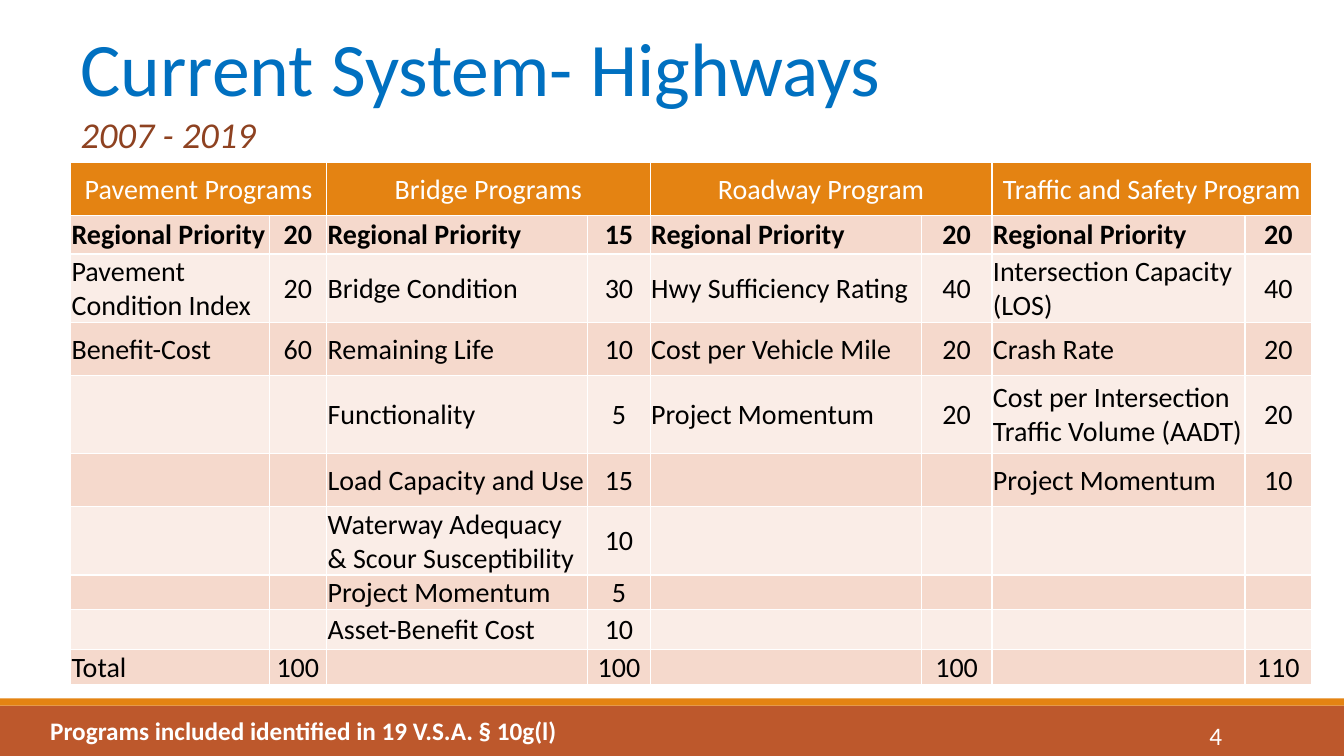
from pptx import Presentation
from pptx.dml.color import RGBColor
from pptx.enum.shapes import MSO_SHAPE
from pptx.enum.text import MSO_ANCHOR, MSO_AUTO_SIZE, PP_ALIGN
from pptx.oxml import parse_xml
from pptx.oxml.ns import nsdecls
from pptx.util import Inches, Pt

RECT = MSO_SHAPE.RECTANGLE
TOP, MIDDLE = MSO_ANCHOR.TOP, MSO_ANCHOR.MIDDLE
LEFT, CENTER, RIGHT = PP_ALIGN.LEFT, PP_ALIGN.CENTER, PP_ALIGN.RIGHT
NO_FIT = MSO_AUTO_SIZE.NONE

FONT = "Calibri"
WHITE = RGBColor(0xFF, 0xFF, 0xFF)
BLACK = RGBColor(0, 0, 0)
BLUE = RGBColor(0x00, 0x70, 0xC0)
BROWN = RGBColor(0x8E, 0x42, 0x21)
RUST = RGBColor(0xBD, 0x58, 0x2C)
ORANGE = RGBColor(0xE4, 0x83, 0x12)
BANDS = RGBColor(0xFA, 0xED, 0xE7), RGBColor(0xF5, 0xD9, 0xCC)

SLIDE_W, SLIDE_H = 13.33, 7.5
COLS = [1.97, 0.57, 2.59, 0.62, 2.69, 0.7, 2.51, 0.66]
ROWS = [0.53, 0.38, 0.66, 0.53, 0.77, 0.53, 0.66, 0.34, 0.4, 0.34]
PROGRAMS = ["Pavement Programs", "Bridge Programs", "Roadway Program",
            "Traffic and Safety Program"]
CRITERIA = [
    ["Regional Priority", "20", "Regional Priority", "15",
     "Regional Priority", "20", "Regional Priority", "20"],
    ["Pavement Condition Index", "20", "Bridge Condition", "30",
     "Hwy Sufficiency Rating", "40", "Intersection Capacity (LOS)", "40"],
    ["Benefit-Cost", "60", "Remaining Life", "10",
     "Cost per Vehicle Mile", "20", "Crash Rate", "20"],
    ["", "", "Functionality", "5", "Project Momentum", "20",
     "Cost per Intersection Traffic Volume (AADT)", "20"],
    ["", "", "Load Capacity and Use", "15", "", "", "Project Momentum", "10"],
    ["", "", "Waterway Adequacy & Scour Susceptibility", "10", "", "", "", ""],
    ["", "", "Project Momentum", "5", "", "", "", ""],
    ["", "", "Asset-Benefit Cost", "10", "", "", "", ""],
    ["Total", "100", "", "100", "", "100", "", "110"],
]


def add_run(p, text, size, color, bold=False, italic=False):
    """Add one formatted run to a paragraph."""
    r = p.add_run()
    r.text = text
    r.font.name, r.font.size = FONT, Pt(size)
    r.font.bold, r.font.italic = bold, italic
    r.font.color.rgb = color


def add_bar(s, top, height, color):
    """Draw a full-width footer bar."""
    sp = s.shapes.add_shape(RECT, 0, Inches(top), Inches(SLIDE_W), Inches(height))
    sp.shadow.inherit = False
    sp.fill.solid()
    sp.fill.fore_color.rgb = color
    sp.line.fill.background()


def add_label(s, box, text, align, anchor, bold=False):
    """Add a white footer label."""
    tf = s.shapes.add_textbox(*map(Inches, box)).text_frame
    tf.word_wrap = True
    tf.vertical_anchor = anchor
    p = tf.paragraphs[0]
    p.alignment = align
    add_run(p, text, 18, WHITE, bold)


def add_title(s):
    """Fill the title placeholder with the heading and the years."""
    sp = s.shapes.title
    sp.left, sp.top, sp.width, sp.height = map(Inches, (0.7, 0.16, 8.22, 1.45))
    tf = sp.text_frame
    tf.word_wrap = False
    tf.auto_size = NO_FIT
    tf.vertical_anchor = TOP
    heading, years = tf.paragraphs[0], tf.add_paragraph()
    heading.alignment = years.alignment = LEFT
    add_run(heading, "Current System- Highways", 54, BLUE)
    add_run(years, "2007 - 2019", 26, BROWN, italic=True)


def style_cell(cell, fill):
    """Set the insets, white borders and fill of a cell."""
    cell.margin_left = cell.margin_right = cell.margin_top = Inches(0.01)
    cell.margin_bottom = 0
    cell.vertical_anchor = MIDDLE
    tc_pr = cell._tc.get_or_add_tcPr()
    for side in "LRTB":
        tc_pr.append(parse_xml(
            f'<a:ln{side} {nsdecls("a")} w="{Pt(1)}"><a:solidFill>'
            f'<a:srgbClr val="{WHITE}"/></a:solidFill></a:ln{side}>'))
    cell.fill.solid()
    cell.fill.fore_color.rgb = fill


def add_cell_text(cell, text, align, color, bold=False):
    """Write the text of a cell."""
    p = cell.text_frame.paragraphs[0]
    p.alignment = align
    if text:
        add_run(p, text, 20, color, bold)


def add_criteria_table(s):
    """Build the table of criteria and weights by program."""
    table = s.shapes.add_table(
        len(ROWS), len(COLS), Inches(0.7), Inches(1.61),
        Inches(sum(COLS)), Inches(sum(ROWS))).table
    for column, width in zip(table.columns, COLS):
        column.width = Inches(width)
    for row, height in zip(table.rows, ROWS):
        row.height = Inches(height)
    for c in range(len(COLS)):
        style_cell(table.cell(0, c), ORANGE)
    for i, program in enumerate(PROGRAMS):
        cell = table.cell(0, 2 * i)
        cell.merge(table.cell(0, 2 * i + 1))
        add_cell_text(cell, program, CENTER, WHITE)
    for r, texts in enumerate(CRITERIA, 1):
        for c, text in enumerate(texts):
            cell = table.cell(r, c)
            style_cell(cell, BANDS[r % 2])
            add_cell_text(cell, text, CENTER if c % 2 else LEFT, BLACK, r == 1)


def main():
    """Build and save the slide."""
    prs = Presentation()
    prs.slide_width, prs.slide_height = Inches(SLIDE_W), Inches(SLIDE_H)
    s = prs.slides.add_slide(prs.slide_layouts[5])
    add_bar(s, 7, 0.5, RUST)
    add_bar(s, 6.93, 0.07, ORANGE)
    add_label(s, (10.79, 7.1, 1.43, 0.4), "4", RIGHT, MIDDLE)
    add_criteria_table(s)
    add_label(s, (0.4, 7.05, 5.6, 0.4),
              "Programs included identified in 19 V.S.A. § 10g(l)", LEFT, TOP, True)
    add_title(s)
    prs.save("out.pptx")


if __name__ == "__main__":
    main()
